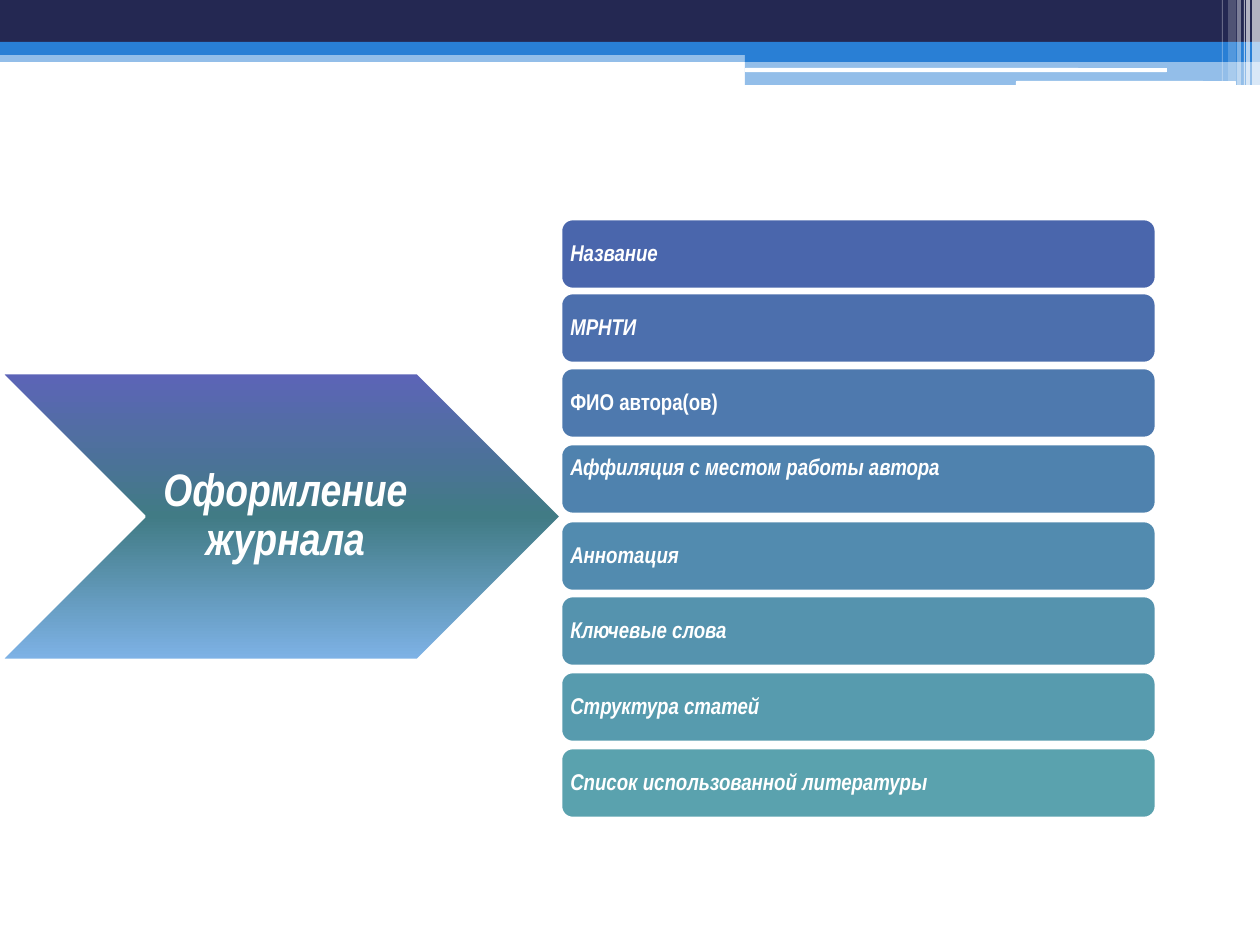
from copy import deepcopy

from lxml.etree import SubElement
from pptx import Presentation
from pptx.dml.color import RGBColor
from pptx.enum.shapes import MSO_SHAPE
from pptx.enum.text import MSO_ANCHOR, PP_ALIGN
from pptx.oxml.ns import qn
from pptx.util import Inches, Pt

PX = Inches(10) / 1260
WHITE = RGBColor(0xFF, 0xFF, 0xFF)
NAVY = RGBColor(0x24, 0x28, 0x52)
BLUE = RGBColor(0x29, 0x7F, 0xD5)
VIOLET = RGBColor(0x5C, 0x64, 0xB7)
TEAL = RGBColor(0x41, 0x7B, 0x85)
SKY = RGBColor(0x7E, 0xB2, 0xE6)
ITEM_1 = RGBColor(0x4A, 0x66, 0xAC)
ITEM_2 = RGBColor(0x4C, 0x6F, 0xAD)
ITEM_3 = RGBColor(0x4E, 0x79, 0xAE)
ITEM_4 = RGBColor(0x4F, 0x82, 0xAE)
ITEM_5 = RGBColor(0x52, 0x8B, 0xAF)
ITEM_6 = RGBColor(0x55, 0x93, 0xAE)
ITEM_7 = RGBColor(0x57, 0x9B, 0xAE)
ITEM_8 = RGBColor(0x5A, 0xA2, 0xAE)


def add_box(kind, x, y, w, h, color=None, alpha=100, outlined=False):
    sp = s.shapes.add_shape(kind, *(round(v * PX) for v in (x, y, w, h)))
    sp.shadow.inherit = False
    if color is not None:
        sp.fill.solid()
        sp.fill.fore_color.rgb = color
    if alpha < 100:
        clr = sp.fill._xPr.find(qn("a:solidFill"))[0]
        SubElement(clr, qn("a:alpha"), val=str(alpha * 1000))
    if outlined:
        sp.line.color.rgb = WHITE
        sp.line.width = Pt(1.5)
    else:
        sp.line.fill.background()
    return sp


def write(sp, text, size=13, italic=True, align=PP_ALIGN.LEFT, insets=(6, 6, 6, 6)):
    tf = sp.text_frame
    tf.word_wrap = True
    tf.vertical_anchor = MSO_ANCHOR.MIDDLE
    tf.margin_left, tf.margin_top, tf.margin_right, tf.margin_bottom = (
        round(v * PX) for v in insets)
    p = tf.paragraphs[0]
    p.alignment = align
    p.line_spacing = 0.9
    r = p.add_run()
    r.text = text
    r.font.name = "Arial Narrow"
    r.font.size = Pt(size)
    r.font.bold = True
    r.font.italic = italic
    r.font.color.rgb = WHITE


prs = Presentation()
prs.slide_width, prs.slide_height = Inches(10), Inches(7.5)
s = prs.slides.add_slide(prs.slide_layouts[6])

bands = [
    (0, 50, 1260, 12, BLUE, 50),
    (0, 0, 1260, 42, NAVY, 100),
    (0, 42, 1260, 13, BLUE, 100),
    (745, 49, 515, 13, BLUE, 100),
    (745, 61, 515, 24, BLUE, 50),
]
for band in bands:
    add_box(MSO_SHAPE.RECTANGLE, *band)

for x, y, w, h in [(745, 68, 422, 4), (1016, 81, 220, 5)]:
    add_box(MSO_SHAPE.ROUNDED_RECTANGLE, x, y, w, h, WHITE)

stripes = [(1252, 8, 85, 65), (1246, 4, 85, 65), (1244, 1, 85, 60),
           (1237, 4, 85, 40), (1228, 8, 81, 20), (1222, 1, 81, 30)]
for x, w, h, alpha in stripes:
    add_box(MSO_SHAPE.RECTANGLE, x, 0, w, h, WHITE, alpha)

items = [
    (219, "Название", ITEM_1, {}),
    (293, "МРНТИ", ITEM_2, {}),
    (368, "ФИО автора(ов)", ITEM_3, {"italic": False}),
    (444, "Аффиляция с местом работы автора", ITEM_4, {"insets": (6, 6, 6, 28)}),
    (521, "Аннотация", ITEM_5, {}),
    (596, "Ключевые слова", ITEM_6, {}),
    (672, "Структура статей", ITEM_7, {}),
    (748, "Список использованной литературы", ITEM_8, {}),
]
for y, text, color, fmt in items:
    sp = add_box(MSO_SHAPE.ROUNDED_RECTANGLE, 561, y, 595, 70, color, outlined=True)
    write(sp, text, **fmt)

sp = add_box(MSO_SHAPE.CHEVRON, 1, 373, 560, 287, outlined=True)
sp.fill.gradient()
sp.fill.gradient_angle = 270
gs = sp.fill._xPr.find(qn("a:gradFill")).find(qn("a:gsLst"))
gs.insert(1, deepcopy(gs[0]))
for stop, color, pos in zip(sp.fill.gradient_stops, (VIOLET, TEAL, SKY), (0, 0.5, 1)):
    stop.color.rgb = color
    stop.position = pos
write(sp, "Оформление журнала", size=26, align=PP_ALIGN.CENTER, insets=(14, 5, 5, 5))

prs.save("out.pptx")
